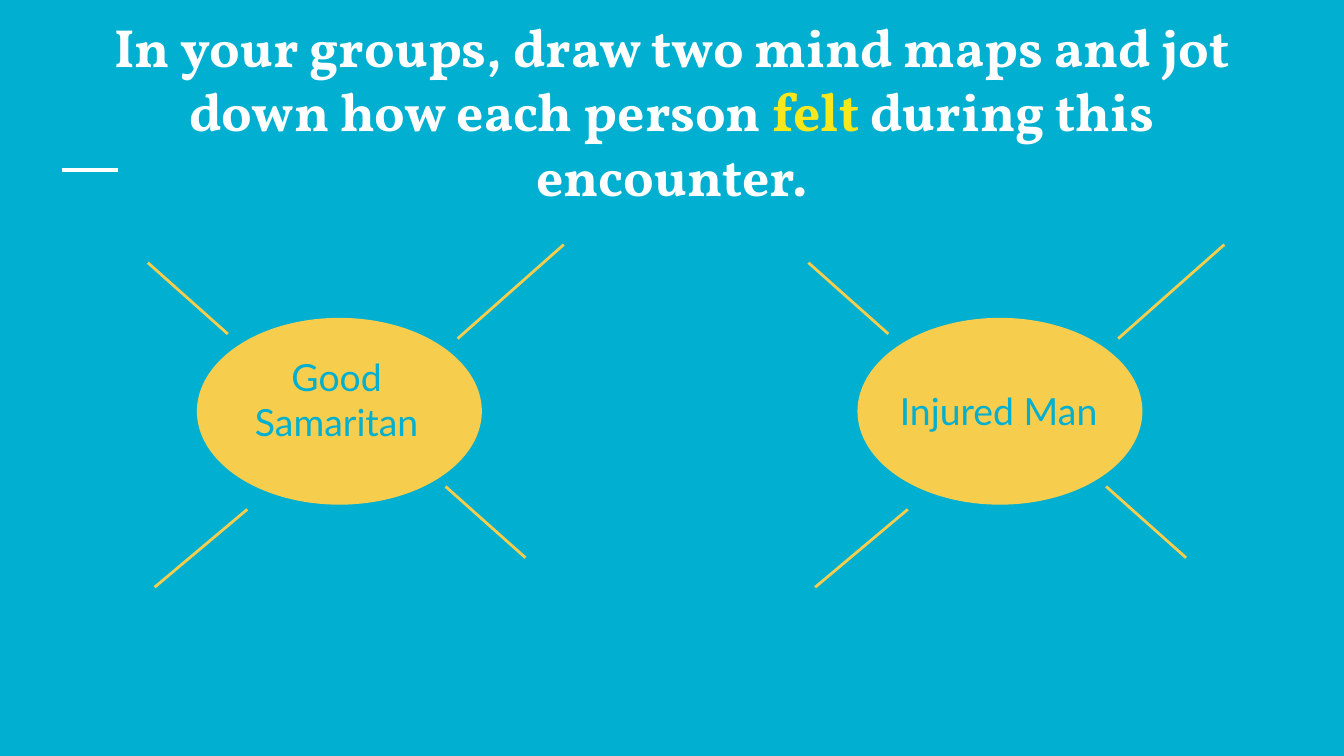
from dataclasses import dataclass

from lxml.etree import SubElement
from pptx import Presentation
from pptx.dml.color import RGBColor
from pptx.enum.shapes import MSO_CONNECTOR, MSO_SHAPE
from pptx.enum.text import MSO_ANCHOR, MSO_AUTO_SIZE, PP_ALIGN
from pptx.oxml.ns import qn
from pptx.slide import Slide
from pptx.text.text import Font, TextFrame
from pptx.util import Emu, Pt

EMU_PER_PX = 4572  # 200 px to the inch
SLIDE_WIDTH, SLIDE_HEIGHT = 2000, 1125
TEXT_INSET = 20


@dataclass(frozen=True)
class Theme:
    background: RGBColor = RGBColor(0x01, 0xAF, 0xD1)
    title: RGBColor = RGBColor(0xFF, 0xFF, 0xFF)
    highlight: RGBColor = RGBColor(0xF8, 0xE7, 0x1C)
    bubble: RGBColor = RGBColor(0xF6, 0xCD, 0x4C)
    title_font: str = "Vollkorn"
    label_font: str = "Lato"
    title_size: float = 28.8
    label_size: float = 20
    accent_width: float = 2.25
    branch_width: float = 1.5


@dataclass(frozen=True)
class Box:
    left: int
    top: int
    width: int
    height: int

    def to_emu(self) -> tuple[Emu, Emu, Emu, Emu]:
        return px(self.left), px(self.top), px(self.width), px(self.height)


@dataclass(frozen=True)
class Line:
    start_x: int
    start_y: int
    end_x: int
    end_y: int


@dataclass(frozen=True)
class MindMap:
    person: str
    left: int
    label_box: Box


THEME = Theme()
TITLE_BOX = Box(68, 0, 1864, 142)
TITLE_PARTS = (
    ("In your groups, draw two mind maps and jot down how each person ", THEME.title),
    ("felt", THEME.highlight),
    (" during this encounter.", THEME.title),
)
ACCENT = Line(92, 253, 176, 253)
BUBBLE_TOP, BUBBLE_WIDTH, BUBBLE_HEIGHT = 473, 424, 278
# Horizontal places are counted from the left edge of the bubble.
BRANCHES = (
    Line(46, 497, -73, 391),
    Line(489, 830, 370, 724),
    Line(-63, 874, 75, 758),
    Line(388, 504, 546, 364),
)
MIND_MAPS = (
    MindMap("Good Samaritan", 293, Box(352, 507, 298, 176)),
    MindMap("Injured Man", 1276, Box(1317, 558, 338, 108)),
)


def px(length: int) -> Emu:
    return Emu(length * EMU_PER_PX)


def set_font(font: Font, name: str, size: float, color: RGBColor, bold: bool) -> None:
    font.name = name
    font.size = Pt(size)
    font.bold = bold
    font.color.rgb = color


def set_frame(frame: TextFrame) -> None:
    frame.word_wrap = True
    frame.vertical_anchor = MSO_ANCHOR.TOP
    frame.margin_left = frame.margin_right = px(TEXT_INSET)
    frame.margin_top = frame.margin_bottom = px(TEXT_INSET)


def add_line(slide: Slide, line: Line, color: RGBColor, width: float) -> None:
    connector = slide.shapes.add_connector(
        MSO_CONNECTOR.STRAIGHT,
        px(line.start_x), px(line.start_y), px(line.end_x), px(line.end_y),
    )
    connector.line.color.rgb = color
    connector.line.width = Pt(width)
    SubElement(connector._element.spPr, qn("a:effectLst"))


def fill_title(slide: Slide) -> None:
    title = slide.shapes.title
    title.left, title.top, title.width, title.height = TITLE_BOX.to_emu()
    frame = title.text_frame
    set_frame(frame)
    frame.auto_size = MSO_AUTO_SIZE.NONE
    paragraph = frame.paragraphs[0]
    paragraph.alignment = PP_ALIGN.CENTER
    paragraph.line_spacing = 1.0
    for text, color in TITLE_PARTS:
        run = paragraph.add_run()
        run.text = text
        set_font(run.font, THEME.title_font, THEME.title_size, color, True)


def add_bubble(slide: Slide, mind_map: MindMap) -> None:
    bubble_box = Box(mind_map.left, BUBBLE_TOP, BUBBLE_WIDTH, BUBBLE_HEIGHT)
    bubble = slide.shapes.add_shape(MSO_SHAPE.OVAL, *bubble_box.to_emu())
    bubble.shadow.inherit = False
    bubble.fill.solid()
    bubble.fill.fore_color.rgb = THEME.bubble
    bubble.line.fill.background()

    label = slide.shapes.add_textbox(*mind_map.label_box.to_emu())
    frame = label.text_frame
    set_frame(frame)
    frame.auto_size = MSO_AUTO_SIZE.SHAPE_TO_FIT_TEXT
    frame.text = mind_map.person
    paragraph = frame.paragraphs[0]
    paragraph.alignment = PP_ALIGN.CENTER
    set_font(paragraph.runs[0].font, THEME.label_font, THEME.label_size,
             THEME.background, False)


def add_branches(slide: Slide, mind_map: MindMap) -> None:
    for branch in BRANCHES:
        placed = Line(mind_map.left + branch.start_x, branch.start_y,
                      mind_map.left + branch.end_x, branch.end_y)
        add_line(slide, placed, THEME.bubble, THEME.branch_width)


def main() -> None:
    presentation = Presentation()
    presentation.slide_width = px(SLIDE_WIDTH)
    presentation.slide_height = px(SLIDE_HEIGHT)
    slide = presentation.slides.add_slide(presentation.slide_layouts[5])
    slide.background.fill.solid()
    slide.background.fill.fore_color.rgb = THEME.background

    fill_title(slide)
    add_line(slide, ACCENT, THEME.title, THEME.accent_width)
    for mind_map in MIND_MAPS:
        add_bubble(slide, mind_map)
    for mind_map in MIND_MAPS:
        add_branches(slide, mind_map)
    presentation.save("out.pptx")


if __name__ == "__main__":
    main()
